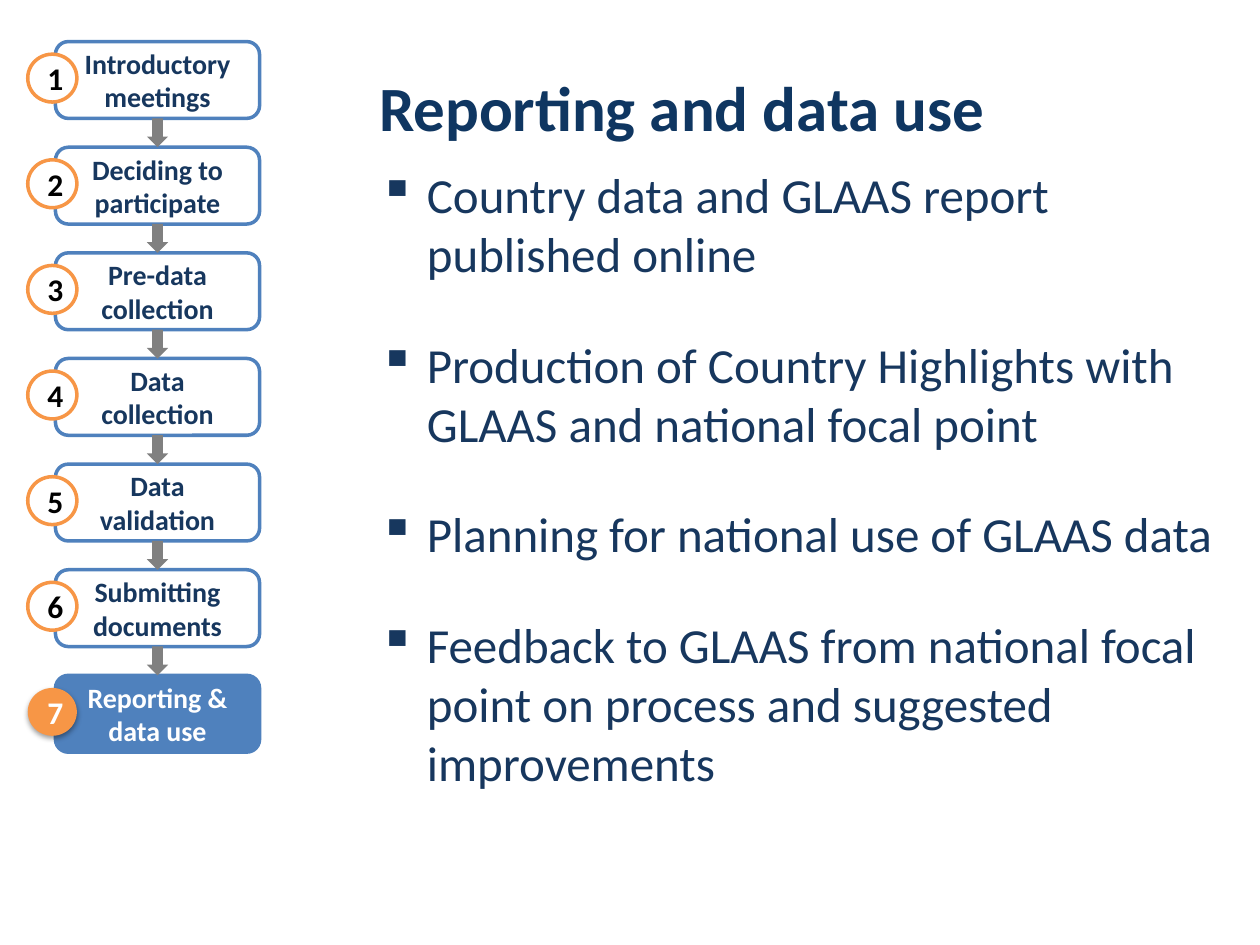
from dataclasses import dataclass

from lxml.etree import SubElement
from pptx import Presentation
from pptx.dml.color import RGBColor
from pptx.enum.shapes import MSO_SHAPE as Shape
from pptx.enum.text import MSO_ANCHOR as Anchor, PP_ALIGN as Align
from pptx.oxml.ns import qn
from pptx.util import Emu, Inches, Pt


@dataclass(frozen=True)
class Theme:
    """Colours, font and type sizes of the slide."""
    white: str = "FFFFFF"
    black: str = "000000"
    navy: str = "17375E"
    title: str = "0F3661"
    blue: str = "4F81BD"
    orange: str = "F79646"
    grey: str = "808080"
    font: str = "Calibri"
    head: int = 36
    body: int = 28
    step: int = 16
    badge: int = 18


THEME = Theme()
STEPS = ["Introductory meetings", "Deciding to participate", "Pre-data collection",
         "Data collection", "Data validation", "Submitting documents",
         "Reporting & data use"]
POINTS = ["Country data and GLAAS report published online",
          "Production of Country Highlights with GLAAS and national focal point",
          "Planning for national use of GLAAS data",
          "Feedback to GLAAS from national focal point on process and suggested improvements"]


def style(par, size, color, bold=False):
    """Set the font of every run in a paragraph."""
    for run in par.runs:
        font = run.font
        font.name, font.size, font.bold = THEME.font, Pt(size), bold
        font.color.rgb = RGBColor.from_string(color)


def add_shape(slide, kind, box, fill, line=None):
    """Add a flat filled shape with an optional outline."""
    shape = slide.shapes.add_shape(kind, *box)
    shape.shadow.inherit = False
    shape.fill.solid()
    shape.fill.fore_color.rgb = RGBColor.from_string(fill)
    if line:
        shape.line.color.rgb = RGBColor.from_string(line)
        shape.line.width = Pt(2)
    else:
        shape.line.fill.background()
    return shape


def label(shape, text, size, color):
    """Write bold centred text in a shape."""
    frame = shape.text_frame
    frame.text = text
    frame.word_wrap = True
    frame.vertical_anchor = Anchor.MIDDLE
    par = frame.paragraphs[0]
    par.alignment = Align.CENTER
    style(par, size, color, True)


def add_shade(shape):
    """Give a shape a soft shadow below it."""
    effects = shape._element.spPr.find(qn("a:effectLst"))
    shade = SubElement(effects, qn("a:outerShdw"), blurRad=str(Pt(3.1)),
                       dist=str(Pt(1.6)), dir="5400000", rotWithShape="0")
    color = SubElement(shade, qn("a:srgbClr"), val=THEME.black)
    SubElement(color, qn("a:alpha"), val="38000")


def add_chain(slide, left, top, width, height):
    """Draw the numbered steps, with the last one highlighted."""
    inset, tall = Inches(0.22), Inches(0.61)
    long, thick = Inches(0.23), Inches(0.17)
    wide, high = Inches(0.39), Inches(0.38)
    last = len(STEPS) - 1
    pitch = (height - tall) // last
    tops = [top + i * pitch for i in range(len(STEPS))]
    mid = left + (inset + width) // 2

    for i, (text, y) in enumerate(zip(STEPS, tops)):
        active = i == last
        box = (left + inset, y, width - inset, tall)
        step = add_shape(slide, Shape.ROUNDED_RECTANGLE, box,
                         THEME.blue if active else THEME.white, THEME.blue)
        frame = step.text_frame
        frame.margin_left = frame.margin_right = Inches(0.11)
        label(step, text, THEME.step, THEME.white if active else THEME.navy)

    for y in tops[:-1]:
        gap = y + (tall + pitch) // 2
        box = (mid - long // 2, gap - thick // 2, long, thick)
        add_shape(slide, Shape.RIGHT_ARROW, box, THEME.grey).rotation = 90

    for i, y in enumerate(tops):
        active = i == last
        box = (left, y + Inches(0.1), wide, high)
        badge = add_shape(slide, Shape.OVAL, box,
                          THEME.orange if active else THEME.white,
                          None if active else THEME.orange)
        label(badge, str(i + 1), THEME.badge, THEME.white if active else THEME.black)
        if active:
            add_shade(badge)


def add_title(slide, left, top, width, height):
    """Place the slide title."""
    frame = slide.shapes.add_textbox(left, top, width, height).text_frame
    frame.text = "Reporting and data use"
    frame.word_wrap = True
    frame.vertical_anchor = Anchor.MIDDLE
    style(frame.paragraphs[0], THEME.head, THEME.title, True)


def add_points(slide, left, top, width, height):
    """Place the bulleted points."""
    frame = slide.shapes.add_textbox(left, top, width, height).text_frame
    frame.word_wrap = True
    frame.text = "\n".join(POINTS)
    indent = Inches(0.38)
    for i, par in enumerate(frame.paragraphs):
        props = par._p.get_or_add_pPr()
        props.set("marL", str(indent))
        props.set("indent", str(-indent))
        SubElement(props, qn("a:buChar"), char="▪")
        par.space_before = Pt(5.6 if i else 0)
        par.space_after = Pt(24)
        style(par, THEME.body, THEME.navy)


def main():
    """Build and save the slide."""
    deck = Presentation()
    deck.slide_width, deck.slide_height = Inches(10), Inches(7.5)
    slide = deck.slides.add_slide(deck.slide_layouts[6])
    add_chain(slide, Inches(0.22), Inches(0.33), Inches(1.84), Inches(5.64))
    add_title(slide, Inches(2.91), Inches(0.3), Inches(6.71), Inches(1.09))
    add_points(slide, Inches(2.91), Inches(1.26), Inches(7.09), Inches(5.16))
    deck.save("out.pptx")


if __name__ == "__main__":
    main()
